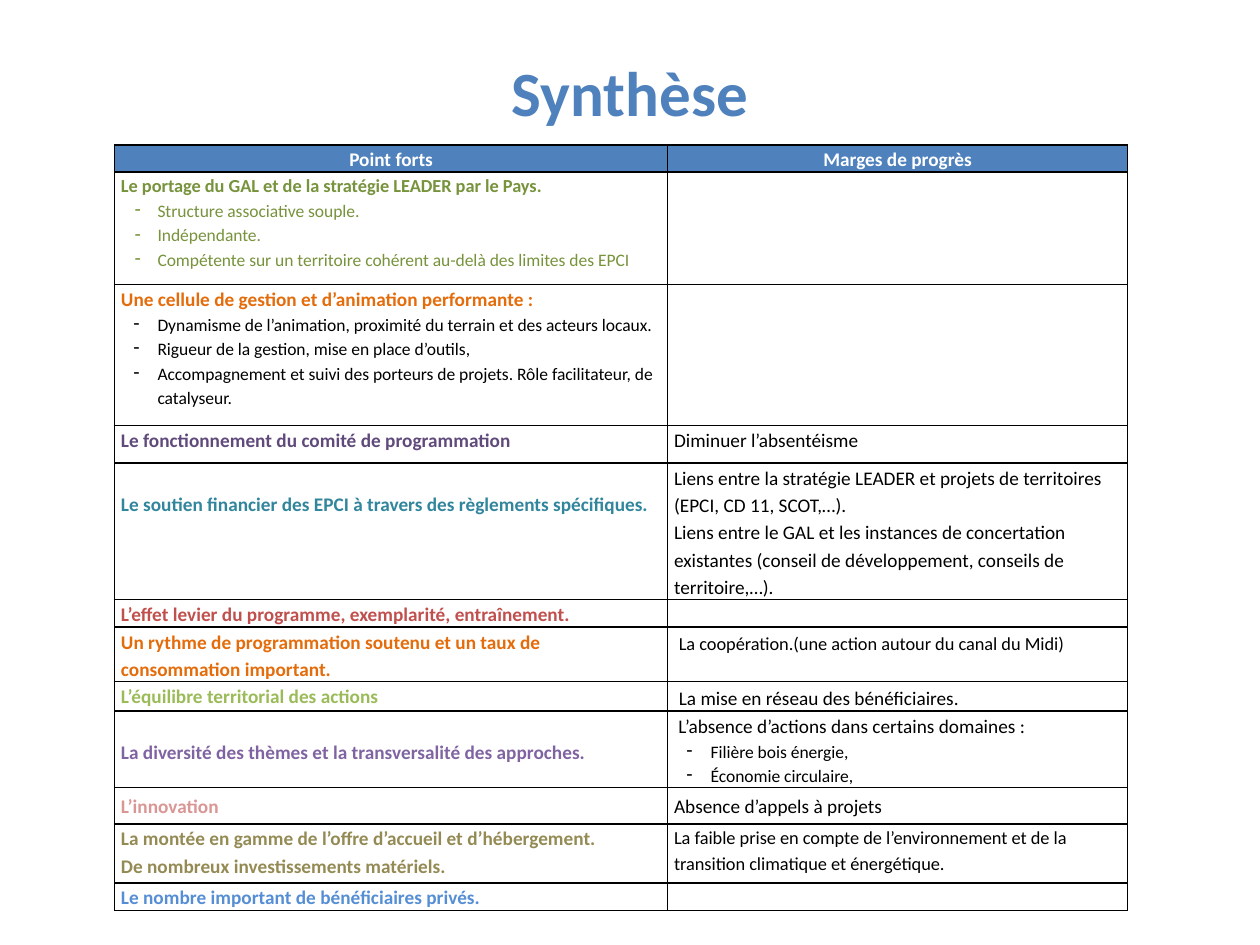
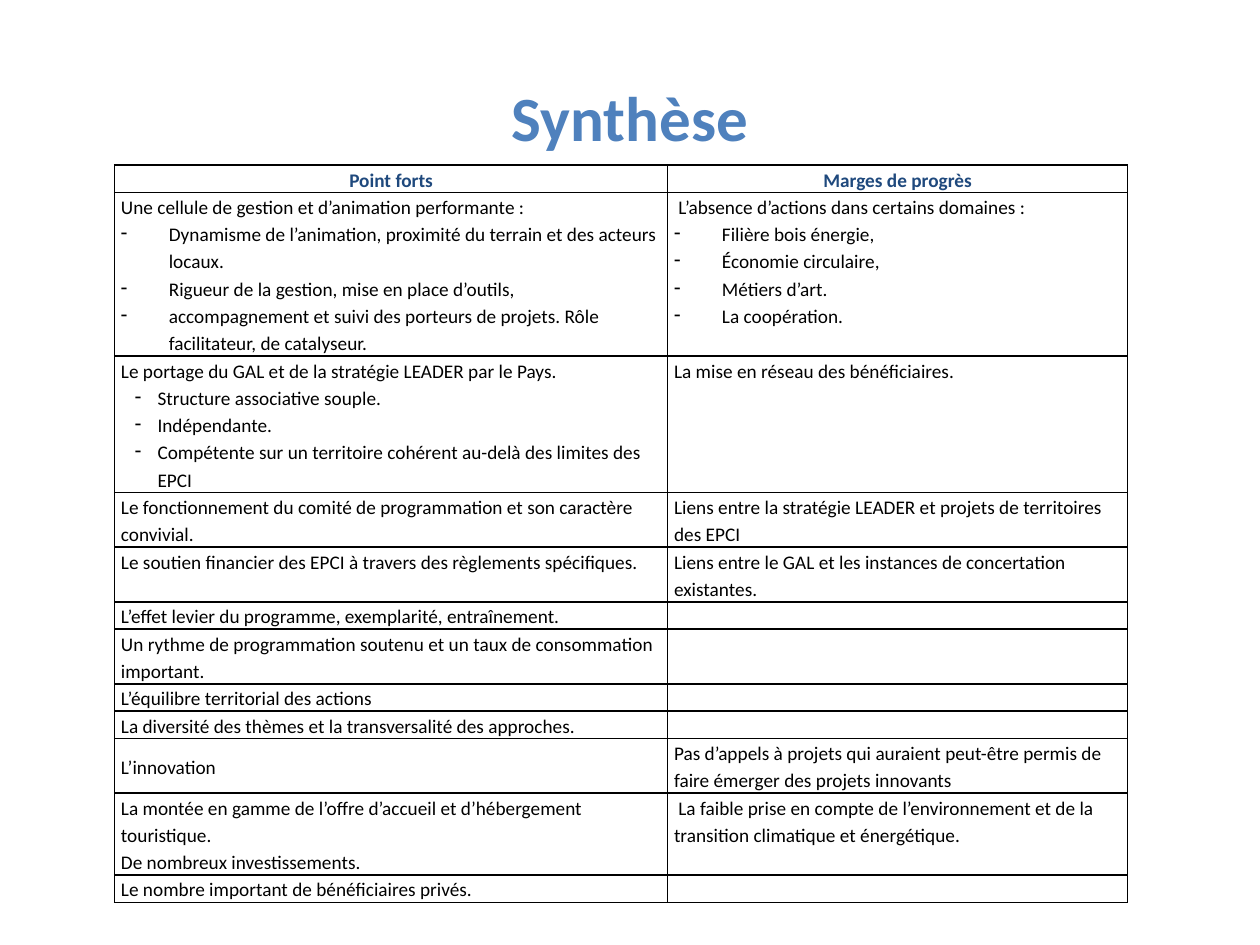
"""Build the two summary slides that compare strengths and room for progress."""
from dataclasses import dataclass

import lxml.etree
import pptx
import pptx.dml.color
import pptx.enum.text
import pptx.oxml.ns
import pptx.util

Inches = pptx.util.Inches
Pt = pptx.util.Pt
RGBColor = pptx.dml.color.RGBColor
qn = pptx.oxml.ns.qn
MIDDLE = pptx.enum.text.MSO_ANCHOR.MIDDLE
CENTER = pptx.enum.text.PP_ALIGN.CENTER

FONT = "Calibri"
BLACK = RGBColor(0x00, 0x00, 0x00)
WHITE = RGBColor(0xFF, 0xFF, 0xFF)
BLUE = RGBColor(0x4F, 0x81, 0xBD)
NAVY = RGBColor(0x1F, 0x49, 0x7D)
SKY = RGBColor(0x55, 0x8E, 0xD5)
OLIVE = RGBColor(0x77, 0x93, 0x3C)
ORANGE = RGBColor(0xE4, 0x6C, 0x0A)
PLUM = RGBColor(0x60, 0x4A, 0x7B)
TEAL = RGBColor(0x31, 0x85, 0x9C)
RED = RGBColor(0xC0, 0x50, 0x4D)
GREEN = RGBColor(0x9B, 0xBB, 0x59)
VIOLET = RGBColor(0x80, 0x64, 0xA2)
PINK = RGBColor(0xD9, 0x96, 0x94)
KHAKI = RGBColor(0x94, 0x8A, 0x54)

TABLE_LEFT = 0.91
COLUMN_WIDTHS = (4.39, 3.65)
SIDE_MARGIN = 0.05
BODY_SIZE = 11
LINE_SPACING = 1.15
HEADINGS = ("Point forts", "Marges de progrès")


@dataclass
class Line:
    """One paragraph of a cell, with an optional dash and larger lead."""
    text: str
    color: RGBColor = BLACK
    size: float = BODY_SIZE
    bold: bool = False
    indent: float = 0
    hang: float = 0
    lead: str = ""


@dataclass
class Row:
    """One table row: its height, its two cells and their placing."""
    height: float
    strengths: list
    progress: list
    middle: bool = False
    drop: float = 0


def theme(color, *texts, size=BODY_SIZE):
    """Return bold coloured lines."""
    return [Line(text, color, size, True) for text in texts]


def plain(*texts, size=BODY_SIZE):
    """Return plain black lines."""
    return [Line(text, size=size) for text in texts]


def dashes(*texts, color=BLACK, size=BODY_SIZE, indent=0.29, hang=0.19):
    """Return lines that start with a hanging dash."""
    return [Line(text, color, size, indent=indent, hang=hang) for text in texts]


def wide_dashes(*texts):
    """Return dashed lines with a wide hanging indent."""
    return dashes(*texts, indent=0.38, hang=0.38)


def set_font(font, color, size, bold):
    """Apply the shared typeface with the given look."""
    font.name, font.size, font.bold = FONT, Pt(size), bold
    font.color.rgb = color


def add_dash(paragraph, indent, hang):
    """Give a paragraph a dash bullet and a hanging indent."""
    properties = paragraph._p.get_or_add_pPr()
    properties.set("marL", str(Inches(indent)))
    properties.set("indent", str(-Inches(hang)))
    lxml.etree.SubElement(properties, qn("a:buChar")).set("char", "-")


def write_line(paragraph, line):
    """Write one line into a paragraph."""
    paragraph.line_spacing = LINE_SPACING
    if line.hang:
        add_dash(paragraph, line.indent, line.hang)
    set_font(paragraph.font, line.color, line.size, line.bold)
    if line.lead:
        lead = paragraph.add_run()
        lead.text = line.lead
        lead.font.size = Pt(12)
    if line.text:
        paragraph.add_run().text = line.text
    else:
        end = lxml.etree.SubElement(paragraph._p, qn("a:endParaRPr"))
        end.set("sz", str(line.size * 100))


def add_borders(cell):
    """Draw a thin black line on each side of a cell."""
    properties = cell._tc.get_or_add_tcPr()
    for side in ("a:lnL", "a:lnR", "a:lnT", "a:lnB"):
        border = lxml.etree.SubElement(properties, qn(side))
        border.set("w", str(Pt(1)))
        fill = lxml.etree.SubElement(border, qn("a:solidFill"))
        lxml.etree.SubElement(fill, qn("a:srgbClr")).set("val", str(BLACK))


def fill_cell(cell, lines, background=None, middle=False, drop=0):
    """Format a cell and write its lines."""
    add_borders(cell)
    if background is None:
        cell.fill.background()
    else:
        cell.fill.solid()
        cell.fill.fore_color.rgb = background
    cell.margin_left = cell.margin_right = Inches(SIDE_MARGIN)
    cell.margin_top, cell.margin_bottom = Inches(drop), 0
    if middle:
        cell.vertical_anchor = MIDDLE
    for index, line in enumerate(lines or plain("")):
        frame = cell.text_frame
        write_line(frame.add_paragraph() if index else frame.paragraphs[0], line)


def add_title(slide, height):
    """Place the slide title."""
    title = slide.shapes.title
    title.left, title.top = Inches(0.5), Inches(0.3)
    title.width, title.height = Inches(9), Inches(height)
    title.text_frame.text = "Synthèse"
    title.text_frame.vertical_anchor = MIDDLE
    heading = title.text_frame.paragraphs[0]
    heading.alignment = CENTER
    set_font(heading.font, BLUE, 36, True)


def add_summary(slide, top, heading_color, heading_fill, rows):
    """Add the two-column summary table."""
    heights = [0.21] + [row.height for row in rows]
    table = slide.shapes.add_table(
        len(heights), 2, Inches(TABLE_LEFT), Inches(top),
        Inches(sum(COLUMN_WIDTHS)), Inches(sum(heights))).table
    table.first_row = table.horz_banding = False
    for column, width in zip(table.columns, COLUMN_WIDTHS):
        column.width = Inches(width)
    for table_row, height in zip(table.rows, heights):
        table_row.height = Inches(height)
    for column, text in enumerate(HEADINGS):
        cell = table.cell(0, column)
        fill_cell(cell, theme(heading_color, text), heading_fill)
        cell.text_frame.paragraphs[0].alignment = CENTER
    for number, row in enumerate(rows, 1):
        fill_cell(table.cell(number, 0), row.strengths, middle=row.middle, drop=row.drop)
        fill_cell(table.cell(number, 1), row.progress, middle=row.middle)


DETAILED_ROWS = [
    Row(0.89, theme(OLIVE, "Le portage du GAL et de la stratégie LEADER par le Pays.", size=10.5)
        + dashes("Structure associative souple.", "Indépendante.",
                 "Compétente sur un territoire cohérent au-delà des limites des EPCI",
                 color=OLIVE, size=10, hang=0.18), []),
    Row(1.12, theme(ORANGE, "Une cellule de gestion et d’animation performante :")
        + dashes("Dynamisme de l’animation, proximité du terrain et des acteurs locaux.",
                 "Rigueur de la gestion, mise en place d’outils,",
                 "Accompagnement et suivi des porteurs de projets. Rôle facilitateur, "
                 "de catalyseur.", size=10), []),
    Row(0.3, theme(PLUM, "Le fonctionnement du comité de programmation"),
        plain("Diminuer l’absentéisme")),
    Row(1.08, theme(TEAL, "Le soutien financier des EPCI à travers des règlements spécifiques."),
        plain("Liens entre la stratégie LEADER et projets de territoires "
              "(EPCI, CD 11, SCOT,…).",
              "Liens entre le GAL et les instances de concertation existantes "
              "(conseil de développement, conseils de territoire,…)."), drop=0.21),
    Row(0.21, theme(RED, "L’effet levier du programme, exemplarité, entraînement."), []),
    Row(0.43, theme(ORANGE, "Un rythme de programmation soutenu et un taux de "
                            "consommation important."),
        [Line("La coopération.(une action autour du canal du Midi)", size=10.5, lead=" ")]),
    Row(0.21, theme(GREEN, "L’équilibre territorial des actions"),
        [Line("La mise en réseau des bénéficiaires.", lead=" ")]),
    Row(0.6, theme(VIOLET, "La diversité des thèmes et la transversalité des approches."),
        plain(" L’absence d’actions dans certains domaines :")
        + dashes("Filière bois énergie,", "Économie circulaire,", size=10), drop=0.21),
    Row(0.29, theme(PINK, "L’innovation"), plain("Absence d’appels à projets"), middle=True),
    Row(0.47, theme(KHAKI, "La montée en gamme de l’offre d’accueil et d’hébergement.",
                    "De nombreux investissements matériels."),
        plain("La faible prise en compte de l’environnement et de la transition "
              "climatique et énergétique.", size=10.5)),
    Row(0.21, theme(SKY, "Le nombre important de bénéficiaires privés."), []),
]

PLAIN_ROWS = [
    Row(1.28, plain("Une cellule de gestion et d’animation performante :")
        + wide_dashes("Dynamisme de l’animation, proximité du terrain et des acteurs locaux.",
                      "Rigueur de la gestion, mise en place d’outils,",
                      "accompagnement et suivi des porteurs de projets. Rôle facilitateur, "
                      "de catalyseur."),
        plain(" L’absence d’actions dans certains domaines :")
        + wide_dashes("Filière bois énergie,", "Économie circulaire,", "Métiers d’art.",
                      "La coopération.")),
    Row(1.06, plain("Le portage du GAL et de la stratégie LEADER par le Pays.")
        + dashes("Structure associative souple.", "Indépendante.",
                 "Compétente sur un territoire cohérent au-delà des limites des EPCI",
                 hang=0.18),
        plain("La mise en réseau des bénéficiaires.")),
    Row(0.43, plain("Le fonctionnement du comité de programmation et son caractère convivial."),
        plain("Liens entre la stratégie LEADER et projets de territoires des EPCI")),
    Row(0.43, plain("Le soutien financier des EPCI à travers des règlements spécifiques."),
        plain("Liens entre le GAL et les instances de concertation existantes.")),
    Row(0.21, plain("L’effet levier du programme, exemplarité, entraînement."), []),
    Row(0.43, plain("Un rythme de programmation soutenu et un taux de consommation "
                    "important."), []),
    Row(0.21, plain("L’équilibre territorial des actions"), []),
    Row(0.21, plain("La diversité des thèmes et la transversalité des approches."), []),
    Row(0.43, plain("L’innovation"),
        plain("Pas d’appels à projets qui auraient peut-être permis de faire émerger "
              "des projets innovants"), middle=True),
    Row(0.64, plain("La montée en gamme de l’offre d’accueil et d’hébergement touristique.",
                    "De nombreux investissements."),
        plain(" La faible prise en compte de l’environnement et de la transition "
              "climatique et énergétique.")),
    Row(0.21, plain("Le nombre important de bénéficiaires privés."), []),
]


def main():
    """Build and save the presentation."""
    deck = pptx.Presentation()
    deck.slide_width, deck.slide_height = Inches(10), Inches(7.5)
    for title_height, top, heading_color, heading_fill, rows in (
            (0.85, 1.15, WHITE, BLUE, DETAILED_ROWS),
            (1.25, 1.31, NAVY, None, PLAIN_ROWS)):
        slide = deck.slides.add_slide(deck.slide_layouts[5])
        add_title(slide, title_height)
        add_summary(slide, top, heading_color, heading_fill, rows)
    deck.save("out.pptx")


if __name__ == "__main__":
    main()
